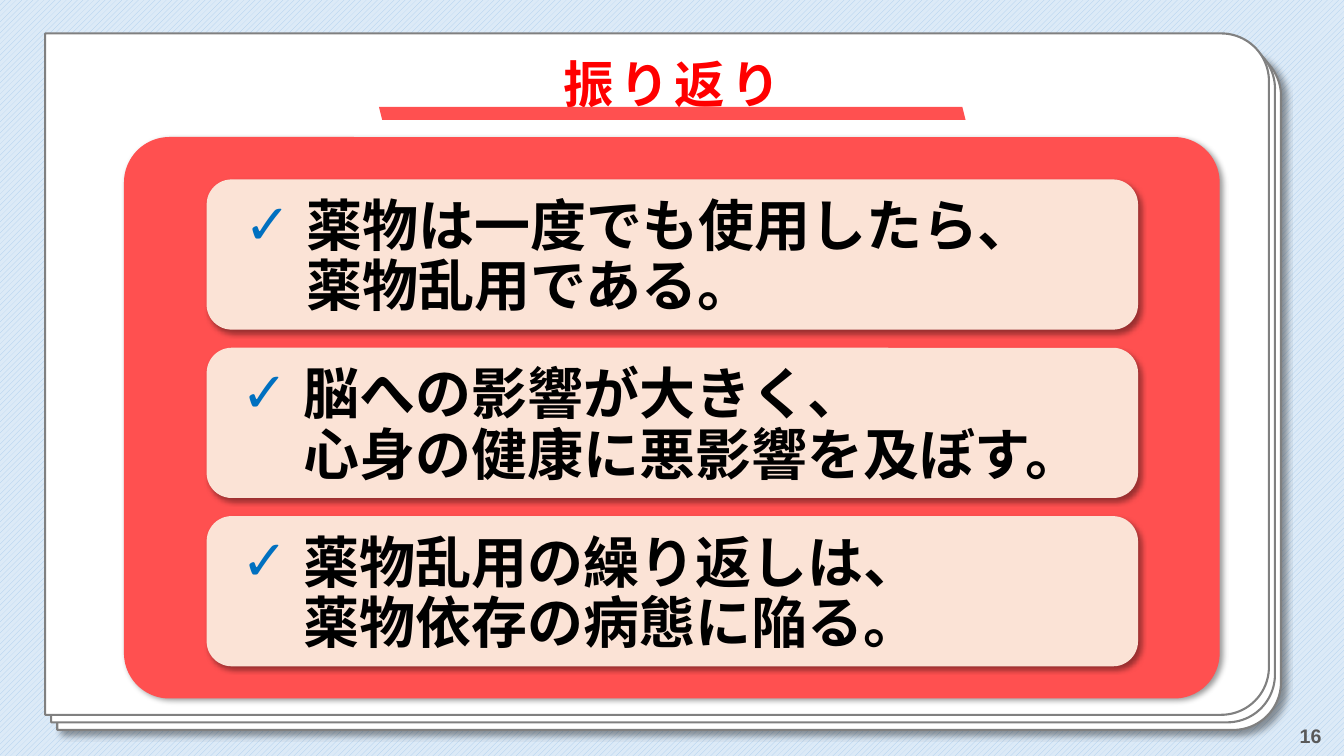
"""Build the review slide: three points on a red panel over stacked sheets."""
import pptx
import pptx.util
import pptx.dml.color
import pptx.enum.dml
import pptx.enum.shapes
import pptx.enum.text
import pptx.oxml
import pptx.oxml.ns

THEME = {
    "font": "Arial", "title": 36, "body": 40, "page": 14,
    "red": "FF5050", "head": "FF0000", "card": "FBE3D6", "white": "FFFFFF",
    "edge": "808080", "ink": "000000", "grey": "595959", "tick": "0070C0",
    "stripe": "A6CAEC", "sky": "DCEAF7",
}
NS = pptx.oxml.ns.nsdecls("a")
KIND = pptx.enum.shapes.MSO_SHAPE
ALIGN = pptx.enum.text.PP_ALIGN
ANCHOR = pptx.enum.text.MSO_ANCHOR

deck = pptx.Presentation()
deck.slide_width = pptx.util.Inches(13.333)
deck.slide_height = pptx.util.Inches(7.5)
col, row = deck.slide_width / 160, deck.slide_height / 90
slide = deck.slides.add_slide(deck.slide_layouts[6])


def tint(name):
    return pptx.dml.color.RGBColor.from_string(THEME[name])


def write(frame, text, size, color, align=ALIGN.LEFT, anchor=ANCHOR.MIDDLE,
          lines=1.0, track=0, hang=None, pads=(1.2, 0.6, 1.2, 0.6)):
    frame.word_wrap = True
    frame.vertical_anchor = anchor
    frame.margin_left, frame.margin_right = int(pads[0] * col), int(pads[2] * col)
    frame.margin_top, frame.margin_bottom = int(pads[1] * row), int(pads[3] * row)
    para = frame.paragraphs[0]
    para.text = text
    para.alignment = align
    para.line_spacing = lines
    if hang:
        props = para._p.get_or_add_pPr()
        props.set("marL", str(int(hang * col)))
        props.set("indent", str(int(-7.44 * col)))
        for part in (f'<a:buClr {NS}><a:srgbClr val="{THEME["tick"]}"/></a:buClr>',
                     f'<a:buFont {NS} typeface="{THEME["font"]}"/>',
                     f'<a:buChar {NS} char="✓"/>'):
            props.append(pptx.oxml.parse_xml(part))
    for run in para.runs:
        run.font.name = THEME["font"]
        run.font.size = pptx.util.Pt(THEME[size])
        run.font.bold = True
        run.font.color.rgb = tint(color)
        if track:
            run.font._element.set("spc", str(track * 100))


def draw(kind, left, top, wide, high, fill, line=None, shade=0):
    shape = slide.shapes.add_shape(
        kind, int(left * col), int(top * row), int(wide * col), int(high * row))
    shape.fill.solid()
    shape.fill.fore_color.rgb = tint(fill)
    if line:
        shape.line.color.rgb = tint(line)
        shape.line.width = pptx.util.Pt(1.5)
    else:
        shape.line.fill.background()
    shape.shadow.inherit = False
    if shade:
        glow = shape._element.spPr.find(pptx.oxml.ns.qn("a:effectLst"))
        glow.append(pptx.oxml.parse_xml(
            f'<a:outerShdw {NS} blurRad="50800" dist="{shade * 12700}" dir="2700000"'
            ' algn="tl" rotWithShape="0"><a:srgbClr val="000000">'
            '<a:alpha val="40000"/></a:srgbClr></a:outerShdw>'))
    return shape


back = slide.background.fill
back.patterned()
back.pattern = pptx.enum.dml.MSO_PATTERN.WIDE_UPWARD_DIAGONAL
back.fore_color.rgb = tint("stripe")
back.back_color.rgb = tint("sky")

for step, shade in enumerate((5, 0, 0)):
    sheet = draw(KIND.ROUND_2_SAME_RECTANGLE, 39.1 - 0.72 * step, -26.5 - 0.9 * step,
                 81.12, 145.68, "white", "edge", shade)
    sheet.rotation = 90
    sheet.adjustments[0] = 0.07
    sheet.adjustments[1] = 0

panel = draw(KIND.ROUNDED_RECTANGLE, 14.76, 16.32, 130.44, 66.84, "red", shade=3)
panel.adjustments[0] = 0.081

page = slide.shapes.add_textbox(
    int(122.52 * col), int(85.2 * row), int(36 * col), int(4.8 * row))
write(page.text_frame, "16", "page", "grey", align=ALIGN.RIGHT)

title = slide.shapes.add_textbox(
    int(45.12 * col), int(3.96 * row), int(69.84 * col), int(10.2 * row))
write(title.text_frame, "振り返り", "title", "head", align=ALIGN.CENTER,
      anchor=ANCHOR.BOTTOM, lines=0.9, track=4)

points = (
    ("薬物は一度でも使用したら、\n薬物乱用である。", 9.84),
    ("脳への影響が大きく、\n心身の健康に悪影響を及ぼす。", 9.48),
    ("薬物乱用の繰り返しは、\n薬物依存の病態に陥る。", 9.48),
)
for rank, (text, hang) in enumerate(points):
    card = draw(KIND.ROUNDED_RECTANGLE, 24.6, 21.36 + 20.04 * rank,
                110.88, 17.88, "card", shade=3)
    write(card.text_frame, text, "body", "ink", lines=0.9, hang=hang,
          pads=(1.2, 2.4, 1.2, 1.44))

bar = draw(KIND.PARALLELOGRAM, 45.12, 12.72, 69.84, 1.56, "red")
bar._element.spPr.find(pptx.oxml.ns.qn("a:xfrm")).set("flipH", "1")

deck.save("out.pptx")
